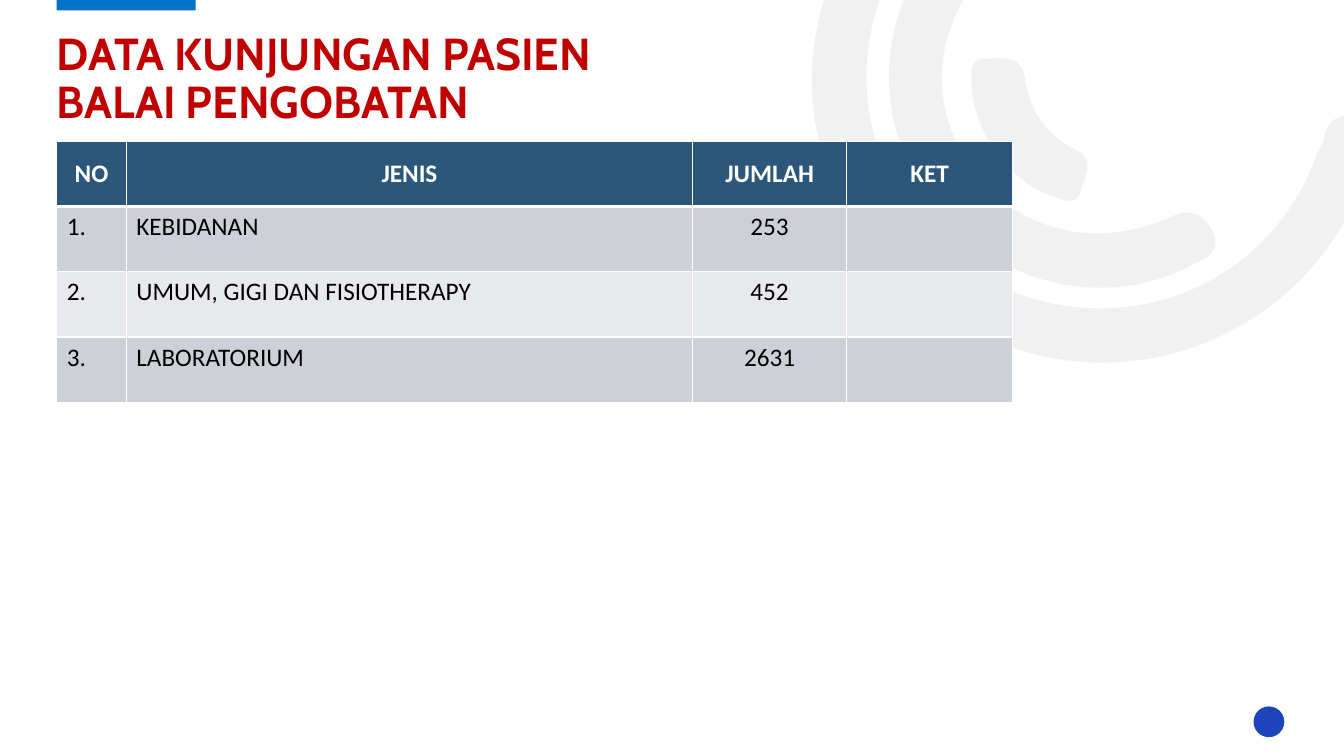
from dataclasses import dataclass
from math import cos, radians, sin
from lxml.etree import SubElement as Sub
from pptx import Presentation
from pptx.dml.color import RGBColor as RGB
from pptx.enum.shapes import MSO_SHAPE as Kind
from pptx.enum.text import MSO_ANCHOR as Anchor, MSO_AUTO_SIZE as Auto, PP_ALIGN as Align
from pptx.oxml.ns import qn
from pptx.util import Pt


@dataclass(frozen=True)
class Theme:
    """Colours, fonts and type sizes of the slide."""
    white: str = "FFFFFF"
    black: str = "000000"
    red: str = "C00000"
    head: str = "2C567A"
    bands: tuple = ("CDD1D7", "E8E9EC")
    ring: str = "E7E6E6"
    bar: str = "0072C7"
    dot: str = "1E44BC"
    title: str = "Cabin"
    body: str = "Calibri"
    big: int = 32
    small: int = 18


LOOK = Theme()
ROWS = [
    ("NO", "JENIS", "JUMLAH", "KET"),
    ("1.", "KEBIDANAN", "253", ""),
    ("2.", "UMUM, GIGI DAN FISIOTHERAPY", "452", ""),
    ("3.", "LABORATORIUM", "2631", ""),
]
WIDTHS = (49.7, 404.6, 109.9, 118.8)
TURN = 144.2
ARCS = [
    [(-172, 111), (-210, 53), (-218, -18), (-182, -90), (-144, -163), (-82, -200),
     (0, -203), (11, -203), (22, -205), (29, -194), (39, -180), (26, -165),
     (6, -165), (-89, -165), (-162, -96), (-166, -5), (-169, 76), (-111, 148),
     (-32, 163), (50, 179), (129, 134), (156, 55), (157, 53), (159, 50),
     (160, 47), (163, 32), (170, 26), (186, 30), (204, 35), (199, 48),
     (195, 58), (175, 122), (135, 167), (73, 192), (-15, 225), (-111, 194)],
    [(-121, 89), (-164, 29), (-159, -49), (-108, -103), (-100, -111), (-92, -122),
     (-79, -110), (-69, -100), (-67, -90), (-80, -77), (-119, -35), (-123, 24),
     (-90, 67), (-59, 111), (-2, 125), (51, 101), (66, 94), (74, 99),
     (81, 111), (88, 126), (77, 130), (67, 135), (4, 169), (-77, 149)],
    [(-74, 55), (-83, 40), (-91, 23), (-91, 5), (-91, -1), (-93, -13),
     (-82, -12), (-71, -12), (-56, -16), (-53, 1), (-50, 25), (-39, 41),
     (-17, 53), (-2, 59), (-10, 73), (-13, 82), (-16, 94), (-25, 89),
     (-33, 86), (-50, 81), (-63, 68)],
]


def write(frame, text, font=LOOK.body, size=LOOK.small, color=LOOK.black,
          bold=False, align=Align.LEFT, space=None):
    """Fill a text frame with one formatted paragraph."""
    para = frame.paragraphs[0]
    para.text = text
    para.alignment, para.line_spacing = align, space
    for run in para.runs:
        run.font.name, run.font.size, run.font.bold = font, Pt(size), bold
        run.font.color.rgb = RGB.from_string(color)


def paint(shape, color):
    """Give a shape a flat fill without line or shadow."""
    shape.shadow.inherit = False
    shape.fill.solid()
    shape.fill.fore_color.rgb = RGB.from_string(color)
    shape.line.fill.background()


def spin(x, y, angle):
    """Turn a point about the origin, clockwise on the slide."""
    a = radians(angle)
    return x * cos(a) - y * sin(a), x * sin(a) + y * cos(a)


def bend(shape):
    """Turn each three straight segments of an outline into one cubic curve."""
    trail = shape._element.find(".//" + qn("a:path"))
    lines = trail.findall(qn("a:lnTo"))
    for i in range(0, len(lines), 3):
        curve = Sub(trail, qn("a:cubicBezTo"))
        for line in lines[i:i + 3]:
            curve.append(line[0])
            trail.remove(line)
    trail.append(trail.find(qn("a:close")))


def rings(slide, x, y):
    """Draw the pale arcs around a centre point."""
    for knots in ARCS:
        spots = [tuple(Pt(v) for v in spin(a, b, -TURN)) for a, b in knots]
        pen = slide.shapes.build_freeform(*spots[0])
        pen.add_line_segments(spots[1:] + spots[:1], close=True)
        arc = pen.convert_to_shape()
        bend(arc)
        midx, midy = spin(arc.left + arc.width / 2, arc.top + arc.height / 2, TURN)
        arc.left = int(Pt(x) + midx - arc.width / 2)
        arc.top = int(Pt(y) + midy - arc.height / 2)
        arc.rotation = TURN
        paint(arc, LOOK.ring)
        tint = arc._element.spPr.find(qn("a:solidFill"))[0]
        Sub(tint, qn("a:alpha"), val="53000")


def mark(slide, kind, color, x, y, wide, high):
    """Place a plain coloured shape in a box."""
    paint(slide.shapes.add_shape(kind, Pt(x), Pt(y), Pt(wide), Pt(high)), color)


def heading(slide, text, x, y, wide, high):
    """Move the title placeholder to a box and fill it."""
    title = slide.shapes.title
    title.left, title.top, title.width, title.height = Pt(x), Pt(y), Pt(wide), Pt(high)
    frame = title.text_frame
    frame.margin_left = frame.margin_right = frame.margin_top = frame.margin_bottom = 0
    frame.word_wrap, frame.auto_size = True, Auto.NONE
    frame.vertical_anchor = Anchor.BOTTOM
    write(frame, text, font=LOOK.title, size=LOOK.big, color=LOOK.red, bold=True, space=0.9)


def edge(cell, foot):
    """Rule a cell in white with a given bottom weight."""
    props = cell._tc.get_or_add_tcPr()
    for side, weight in (("L", 1), ("R", 1), ("T", 1), ("B", foot)):
        line = Sub(props, qn("a:ln" + side), w=str(Pt(weight)))
        Sub(Sub(line, qn("a:solidFill")), qn("a:srgbClr"), val=LOOK.white)


def grid(slide, x, y, wide, high):
    """Build the visit table in a box."""
    table = slide.shapes.add_table(len(ROWS), len(WIDTHS), Pt(x), Pt(y),
                                   Pt(wide), Pt(high)).table
    for col, part in zip(table.columns, WIDTHS):
        col.width = Pt(wide * part / sum(WIDTHS))
    for r, row in enumerate(ROWS):
        table.rows[r].height = Pt(high / len(ROWS))
        head = r == 0
        for c, text in enumerate(row):
            cell = table.cell(r, c)
            edge(cell, foot=3 if head else 1)
            cell.fill.solid()
            fill = LOOK.head if head else LOOK.bands[(r - 1) % 2]
            cell.fill.fore_color.rgb = RGB.from_string(fill)
            cell.vertical_anchor = Anchor.MIDDLE if head else Anchor.TOP
            if text:
                write(cell.text_frame, text, bold=head,
                      color=LOOK.white if head else LOOK.black,
                      align=Align.CENTER if head or c == 2 else Align.LEFT)


def main():
    """Build and save the slide."""
    deck = Presentation()
    deck.slide_width, deck.slide_height = Pt(960), Pt(540)
    slide = deck.slides.add_slide(deck.slide_layouts[5])
    left = 40.5
    rings(slide, 785, 54)
    mark(slide, Kind.RECTANGLE, LOOK.bar, left, -1.2, 99.2, 8.6)
    mark(slide, Kind.OVAL, LOOK.dot, 895.4, 504.6, 22, 22)
    grid(slide, left, 101, 683, 186.4)
    heading(slide, "DATA KUNJUNGAN PASIEN\vBALAI PENGOBATAN", left, 19.2, 878, 72.7)
    deck.save("out.pptx")


if __name__ == "__main__":
    main()
